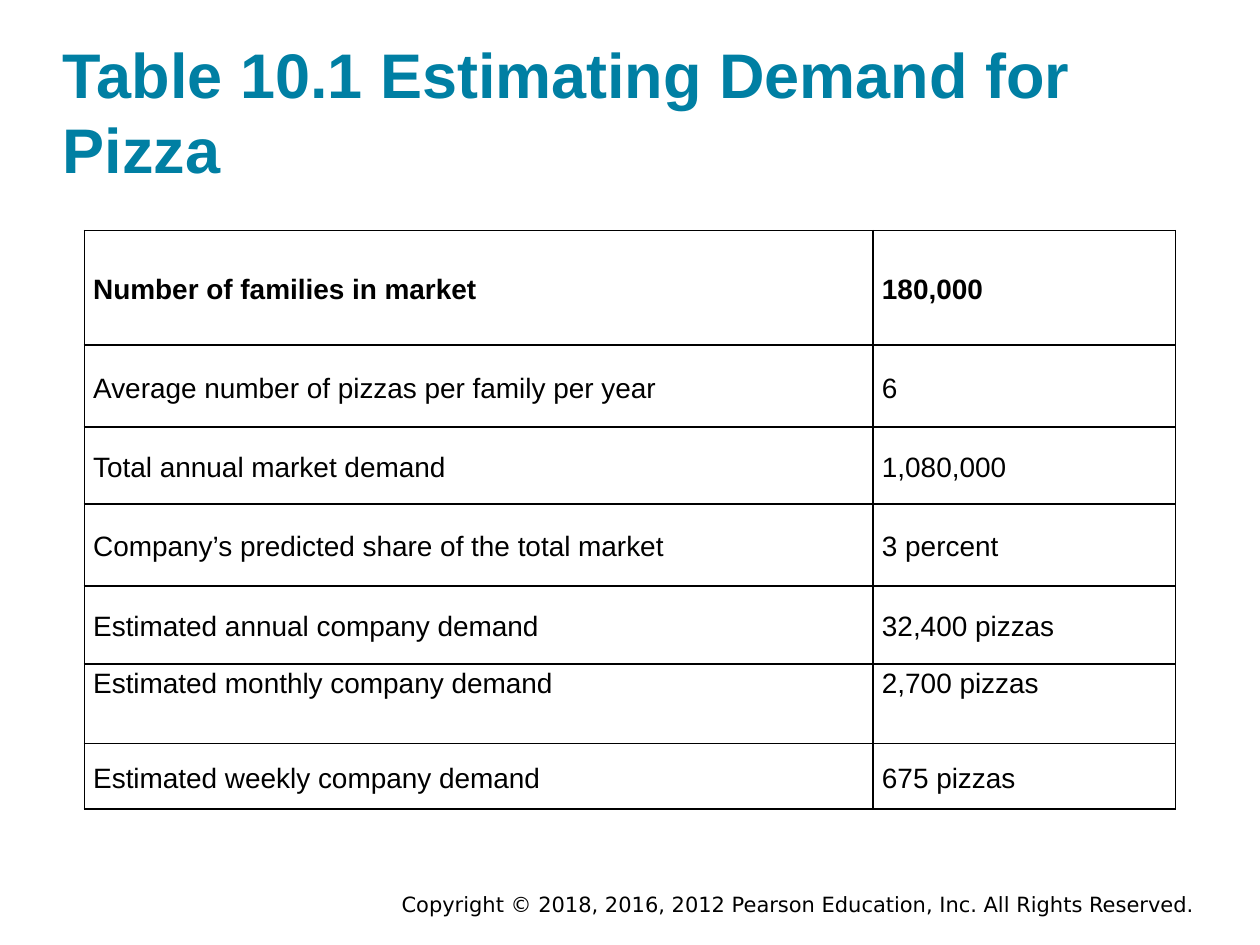
from dataclasses import dataclass

from lxml.etree import SubElement
from pptx import Presentation
from pptx.dml.color import RGBColor
from pptx.enum.text import MSO_ANCHOR as Anchor, PP_ALIGN as Align
from pptx.oxml.ns import qn
from pptx.util import Inches, Pt

WIDTH, HEIGHT = 10, 7.5
BLACK, WHITE, TEAL = "000000", "FFFFFF", "007FA3"
COLUMNS = (6.26, 2.4)


@dataclass
class Row:
    label: str
    value: str
    height: float
    bold: bool = False
    anchor: Anchor = Anchor.MIDDLE


@dataclass
class Label:
    text: str
    box: tuple[float, float, float, float]
    size: float
    font: str
    color: str
    bold: bool = False
    align: Align = Align.LEFT
    anchor: Anchor = Anchor.TOP
    insets: tuple[float, float] = (0, 0)


ROWS = (
    Row("Number of families in market", "180,000", 0.91, bold=True),
    Row("Average number of pizzas per family per year", "6", 0.65),
    Row("Total annual market demand", "1,080,000", 0.61),
    Row("Company’s predicted share of the total market", "3 percent", 0.65),
    Row("Estimated annual company demand", "32,400 pizzas", 0.62),
    Row("Estimated monthly company demand", "2,700 pizzas", 0.63, anchor=Anchor.TOP),
    Row("Estimated weekly company demand", "675 pizzas", 0.52),
)

LABELS = (
    Label("Copyright © 2018, 2016, 2012 Pearson Education, Inc. All Rights Reserved.",
          (1.75, 7.03, 7.83, 0.3), 12, "DejaVu Sans", BLACK,
          align=Align.RIGHT, insets=(0.1, 0.05)),
    Label("Table 10.1 Estimating Demand for Pizza",
          (0.5, 0.28, 9, 1.2), 36, "Arial", TEAL, bold=True, anchor=Anchor.BOTTOM),
)


def rgb(value: str) -> RGBColor:
    """Turn a hex string into a colour."""
    return RGBColor.from_string(value)


def style(p, size: float, font: str, color: str, bold: bool) -> None:
    """Format every run of a paragraph."""
    for r in p.runs:
        r.font.size, r.font.name, r.font.bold = Pt(size), font, bold
        r.font.color.rgb = rgb(color)


def add_label(s, label: Label) -> None:
    """Draw one text box."""
    tf = s.shapes.add_textbox(*map(Inches, label.box)).text_frame
    tf.word_wrap = True
    tf.vertical_anchor = label.anchor
    tf.margin_left = tf.margin_right = Inches(label.insets[0])
    tf.margin_top = tf.margin_bottom = Inches(label.insets[1])
    tf.text = label.text
    p = tf.paragraphs[0]
    p.alignment = label.align
    style(p, label.size, label.font, label.color, label.bold)


def add_borders(cell, color: str, width: float) -> None:
    """Line all four sides of a cell."""
    props = cell._tc.get_or_add_tcPr()
    for i, side in enumerate(("lnL", "lnR", "lnT", "lnB")):
        line = props.makeelement(qn(f"a:{side}"), {"w": str(Pt(width))})
        fill = SubElement(line, qn("a:solidFill"))
        SubElement(fill, qn("a:srgbClr"), val=color)
        props.insert(i, line)


def fill_cell(cell, text: str, row: Row) -> None:
    """Write and format one table cell."""
    cell.text = text
    cell.vertical_anchor = row.anchor
    cell.margin_left = cell.margin_right = Inches(0.07)
    cell.margin_top = cell.margin_bottom = 0
    cell.fill.background()
    p = cell.text_frame.paragraphs[0]
    p.line_spacing = 1.15
    style(p, 16, "Arial", BLACK, row.bold)
    add_borders(cell, BLACK, 1)


def add_demand_table(s, left: float, top: float) -> None:
    """Draw the table of demand estimates."""
    size = sum(COLUMNS), sum(row.height for row in ROWS)
    table = s.shapes.add_table(len(ROWS), len(COLUMNS),
                               *map(Inches, (left, top, *size))).table
    table.horz_banding = False
    for column, width in zip(table.columns, COLUMNS):
        column.width = Inches(width)
    for i, row in enumerate(ROWS):
        table.rows[i].height = Inches(row.height)
        for j, text in enumerate((row.label, row.value)):
            fill_cell(table.cell(i, j), text, row)


def main() -> None:
    """Build and save the slide."""
    prs = Presentation()
    prs.slide_width, prs.slide_height = Inches(WIDTH), Inches(HEIGHT)
    s = prs.slides.add_slide(prs.slide_layouts[6])
    s.background.fill.solid()
    s.background.fill.fore_color.rgb = rgb(WHITE)
    for label in LABELS:
        add_label(s, label)
    add_demand_table(s, 0.67, 1.83)
    prs.save("out.pptx")


if __name__ == "__main__":
    main()
